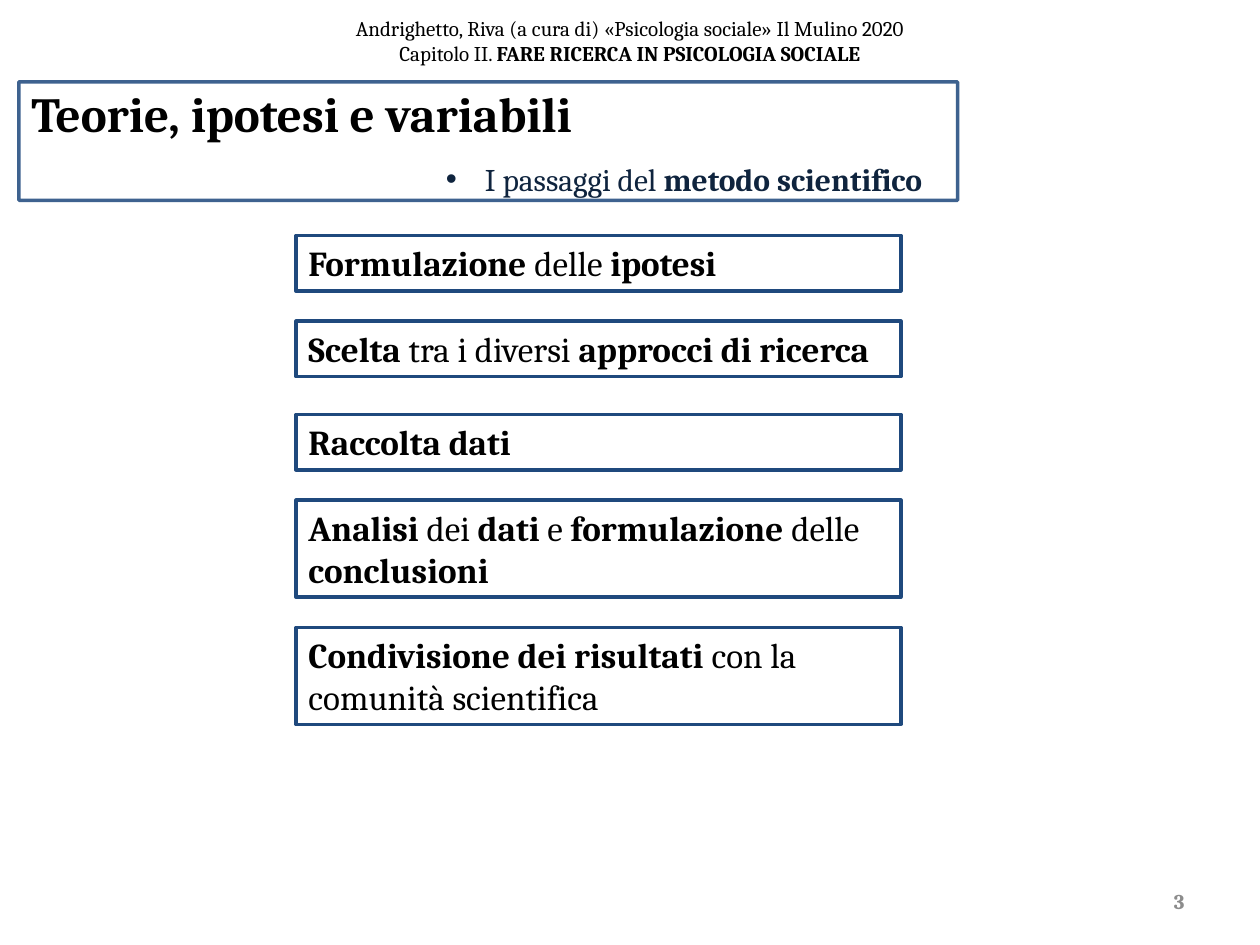
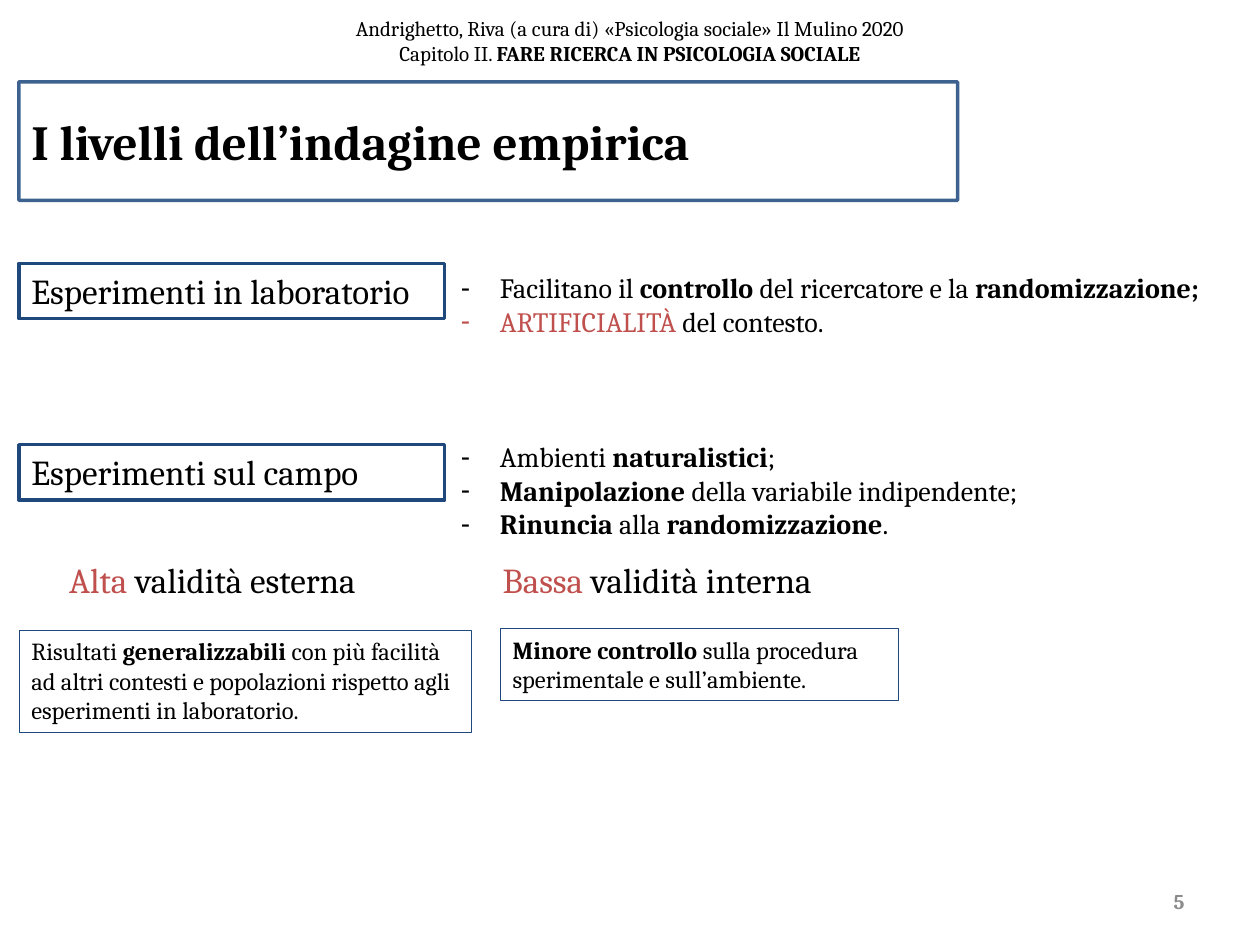
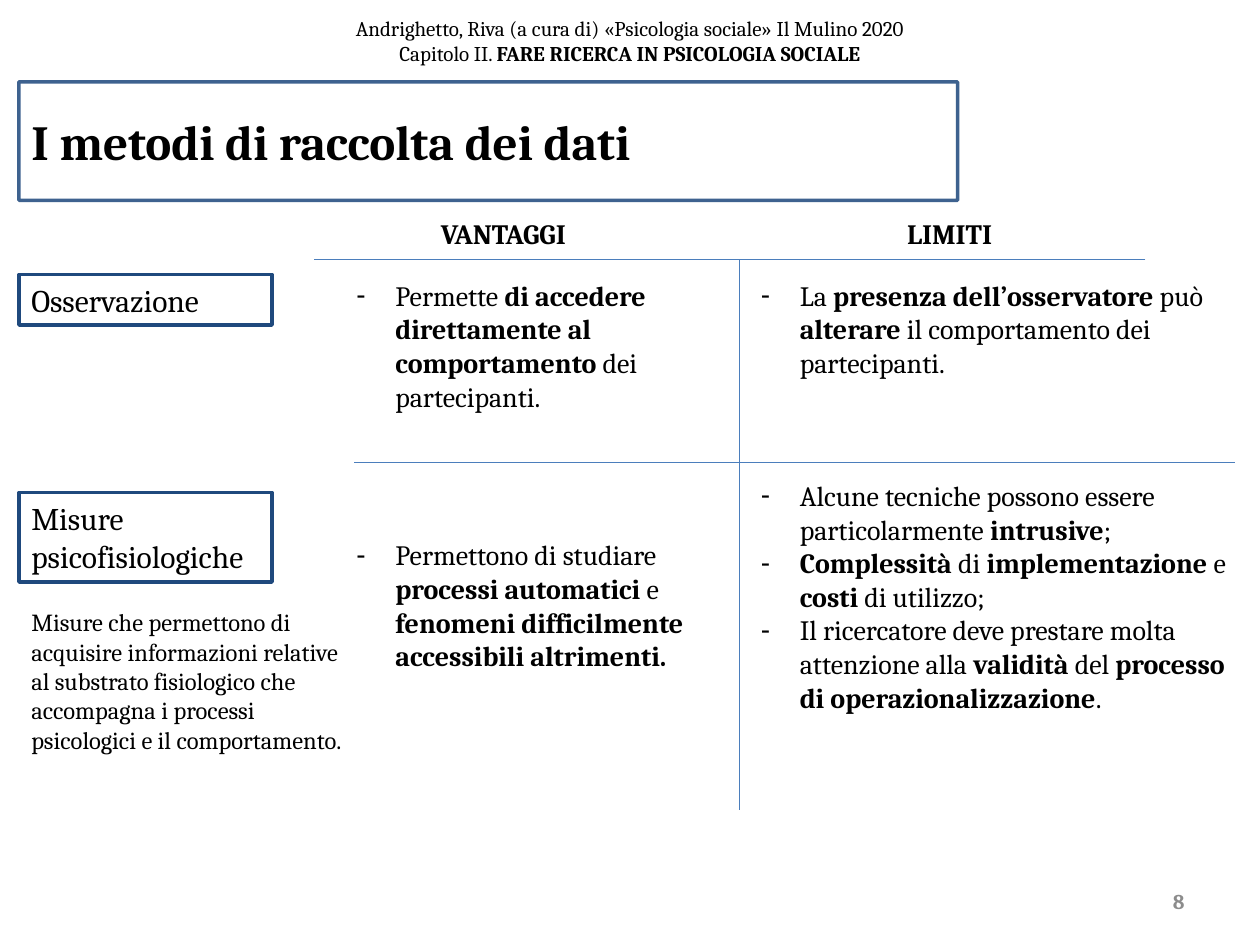
from lxml import etree
from pptx import Presentation
from pptx.dml.color import RGBColor
from pptx.enum.shapes import MSO_CONNECTOR, MSO_SHAPE
from pptx.enum.text import MSO_ANCHOR, MSO_AUTO_SIZE, PP_ALIGN
from pptx.oxml.ns import qn
from pptx.util import Inches, Pt

FONT = "Cambria"
BLACK, WHITE, NAVY, DARK_NAVY = "000000", "FFFFFF", "1F497D", "0F243E"
BLUE, RED, GRAY = "4B7EBC", "C0504D", "8C8C8C"
HEADER = ("Andrighetto, Riva (a cura di) «Psicologia sociale» Il Mulino 2020\n"
          "Capitolo II. *FARE RICERCA IN PSICOLOGIA SOCIALE*")


def rgb(color):
    return RGBColor.from_string(color)


class Deck:
    def __init__(self):
        self.presentation = Presentation()
        self.presentation.slide_width = Inches(10)
        self.presentation.slide_height = Inches(7.5)
        self.slide = None

    def new_slide(self, number, title, title_on_top=False):
        layout = self.presentation.slide_layouts[6]
        self.slide = self.presentation.slides.add_slide(layout)
        self.text(0, -0.11, 10, 0.87, HEADER, 12,
                  align=PP_ALIGN.CENTER, anchor=MSO_ANCHOR.MIDDLE)
        self.text(7.17, 6.95, 2.33, 0.4, f"*{number}*", 12, color=GRAY,
                  align=PP_ALIGN.RIGHT, anchor=MSO_ANCHOR.MIDDLE)
        self.title(title, title_on_top)

    def title(self, title, on_top):
        anchor = MSO_ANCHOR.TOP if on_top else MSO_ANCHOR.MIDDLE
        shape = self.box(0.15, 0.65, 7.45, 0.94, f"*{title}*", 28,
                         fill=None, anchor=anchor)
        if on_top:
            shape.text_frame.margin_top = Inches(0.01)
        line_color = shape.line._get_or_add_ln().find(f".//{qn('a:srgbClr')}")
        etree.SubElement(line_color, qn("a:alpha"), val="86000")

    def text(self, left, top, width, height, text, size, **style):
        shape = self.slide.shapes.add_textbox(
            Inches(left), Inches(top), Inches(width), Inches(height))
        self.fill_text(shape, text, size, **style)
        return shape

    def box(self, left, top, width, height, text, size, fill=WHITE,
            line_width=2, **style):
        shape = self.slide.shapes.add_shape(
            MSO_SHAPE.RECTANGLE, Inches(left), Inches(top), Inches(width), Inches(height))
        shape.shadow.inherit = False
        if fill:
            shape.fill.solid()
            shape.fill.fore_color.rgb = rgb(fill)
        else:
            shape.fill.background()
        shape.line.color.rgb = rgb(NAVY)
        shape.line.width = Pt(line_width)
        self.fill_text(shape, text, size, **style)
        return shape

    def fill_text(self, shape, text, size, color=BLACK, align=PP_ALIGN.LEFT,
                  anchor=MSO_ANCHOR.TOP, bullet=None, line_spacing=None):
        """Fill a shape with one string, or with a list of one string per paragraph."""
        frame = shape.text_frame
        frame.word_wrap = True
        frame.vertical_anchor = anchor
        if anchor == MSO_ANCHOR.TOP and shape.height < Inches(0.94):
            frame.auto_size = MSO_AUTO_SIZE.SHAPE_TO_FIT_TEXT
        for index, content in enumerate([text] if isinstance(text, str) else text):
            paragraph = frame.add_paragraph() if index else frame.paragraphs[0]
            paragraph.alignment = align
            if line_spacing:
                paragraph.line_spacing = line_spacing
            if bullet:
                self.add_bullet(paragraph, bullet)
            paragraph.font.name = FONT
            paragraph.font.size = Pt(size)
            paragraph.font.color.rgb = rgb(color)
            self.add_runs(paragraph, content)

    def add_bullet(self, paragraph, character):
        properties = paragraph._p.get_or_add_pPr()
        properties.set("marL", str(Inches(0.31)))
        properties.set("indent", str(-Inches(0.31)))
        etree.SubElement(properties, qn("a:buFont"), typeface="Arial")
        etree.SubElement(properties, qn("a:buChar"), char=character)

    def add_runs(self, paragraph, content):
        """Add runs: *bold*, ~red~, and a line break at each newline."""
        for line_index, line in enumerate(content.split("\n")):
            if line_index:
                paragraph.add_line_break()
            for bold_index, part in enumerate(line.split("*")):
                for red_index, piece in enumerate(part.split("~")):
                    if not piece:
                        continue
                    run = paragraph.add_run()
                    run.text = piece
                    if bold_index % 2:
                        run.font.bold = True
                    if red_index % 2:
                        run.font.color.rgb = rgb(RED)

    def dashes(self, left, top, width, height, items):
        self.text(left, top, width, height, items, 16, bullet="-")

    def rule(self, start_x, start_y, end_x, end_y):
        connector = self.slide.shapes.add_connector(
            MSO_CONNECTOR.STRAIGHT, Inches(start_x), Inches(start_y),
            Inches(end_x), Inches(end_y))
        connector.line.color.rgb = rgb(BLUE)
        connector.line.width = Pt(0.75)
        etree.SubElement(connector._element.spPr, qn("a:effectLst"))


def add_scientific_method(deck):
    deck.new_slide(3, "Teorie, ipotesi e variabili", title_on_top=True)
    deck.text(3.44, 1.07, 4.16, 0.5, "I passaggi del *metodo scientifico*", 18,
              color=DARK_NAVY, bullet="•", line_spacing=1.5)
    steps = [
        (1.87, 0.44, "*Formulazione* delle *ipotesi*"),
        (2.55, 0.44, "*Scelta* tra i diversi *approcci di ricerca*"),
        (3.29, 0.44, "*Raccolta dati*"),
        (3.97, 0.77, "*Analisi* dei *dati* e *formulazione* delle *conclusioni*"),
        (4.98, 0.77, "*Condivisione dei risultati* con la comunità scientifica"),
    ]
    for top, height, step in steps:
        deck.box(2.35, top, 4.8, height, step, 20)


def add_empirical_levels(deck):
    deck.new_slide(5, "I livelli dell’indagine empirica")
    for top, experiment in ((2.09, "Esperimenti in laboratorio"),
                            (3.53, "Esperimenti sul campo")):
        deck.box(0.15, top, 3.38, 0.44, experiment, 20)
    deck.dashes(3.56, 2.1, 6.44, 0.94, [
        "Facilitano il *controllo* del ricercatore e la *randomizzazione;*",
        "~ARTIFICIALITÀ ~del contesto.",
    ])
    deck.dashes(3.56, 3.44, 5.77, 0.91, [
        "Ambienti *naturalistici*;",
        "*Manipolazione* della variabile indipendente;",
        "*Rinuncia* alla *randomizzazione*.",
    ])
    deck.text(0.45, 4.38, 3.04, 0.44, "~Alta~ validità esterna", 20)
    deck.text(3.89, 4.38, 2.77, 0.44, "~Bassa~ validità interna", 20)
    deck.box(0.15, 5, 3.59, 0.81,
             "Risultati *generalizzabili* con più facilità ad altri contesti e "
             "popolazioni rispetto agli esperimenti in laboratorio.",
             14, fill=None, line_width=0.25)
    deck.box(3.97, 4.99, 3.16, 0.57,
             "*Minore controllo* sulla procedura sperimentale e sull’ambiente.",
             14, fill=None, line_width=0.25)


def add_collection_methods(deck):
    deck.new_slide(8, "I metodi di raccolta dei dati")
    deck.rule(5.87, 2.06, 5.87, 6.43)
    deck.rule(9.09, 2.06, 2.49, 2.06)
    deck.rule(9.8, 3.67, 2.81, 3.67)
    for left, heading in ((3.4, "*VANTAGGI*"), (7.1, "*LIMITI*")):
        deck.text(left, 1.67, 1.52, 0.37, heading, 16)

    deck.box(0.15, 2.18, 2.01, 0.4, "Osservazione", 18)
    deck.dashes(2.73, 2.16, 3.29, 1.18, [
        "Permette *di accedere direttamente al comportamento* dei partecipanti."])
    deck.dashes(5.94, 2.16, 3.86, 0.91, [
        "La *presenza dell’osservatore* può *alterare* il comportamento dei partecipanti."])

    deck.box(0.15, 3.91, 2.01, 0.71, "Misure psicofisiologiche", 18)
    deck.text(0.15, 4.77, 2.8, 1.28,
              "Misure che permettono di acquisire informazioni relative al substrato "
              "fisiologico che accompagna i processi psicologici e il comportamento.", 14)
    deck.dashes(2.73, 4.22, 3.29, 1.18, [
        "Permettono di studiare *processi automatici* e "
        "*fenomeni difficilmente accessibili altrimenti.*"])
    deck.dashes(5.94, 3.75, 4.06, 2.26, [
        "Alcune tecniche possono essere particolarmente *intrusive*;",
        "*Complessità* di *implementazione* e *costi* di utilizzo;",
        "Il ricercatore deve prestare molta attenzione alla *validità* del "
        "*processo di operazionalizzazione*.",
    ])


def main():
    deck = Deck()
    add_scientific_method(deck)
    add_empirical_levels(deck)
    add_collection_methods(deck)
    deck.presentation.save("out.pptx")


if __name__ == "__main__":
    main()
